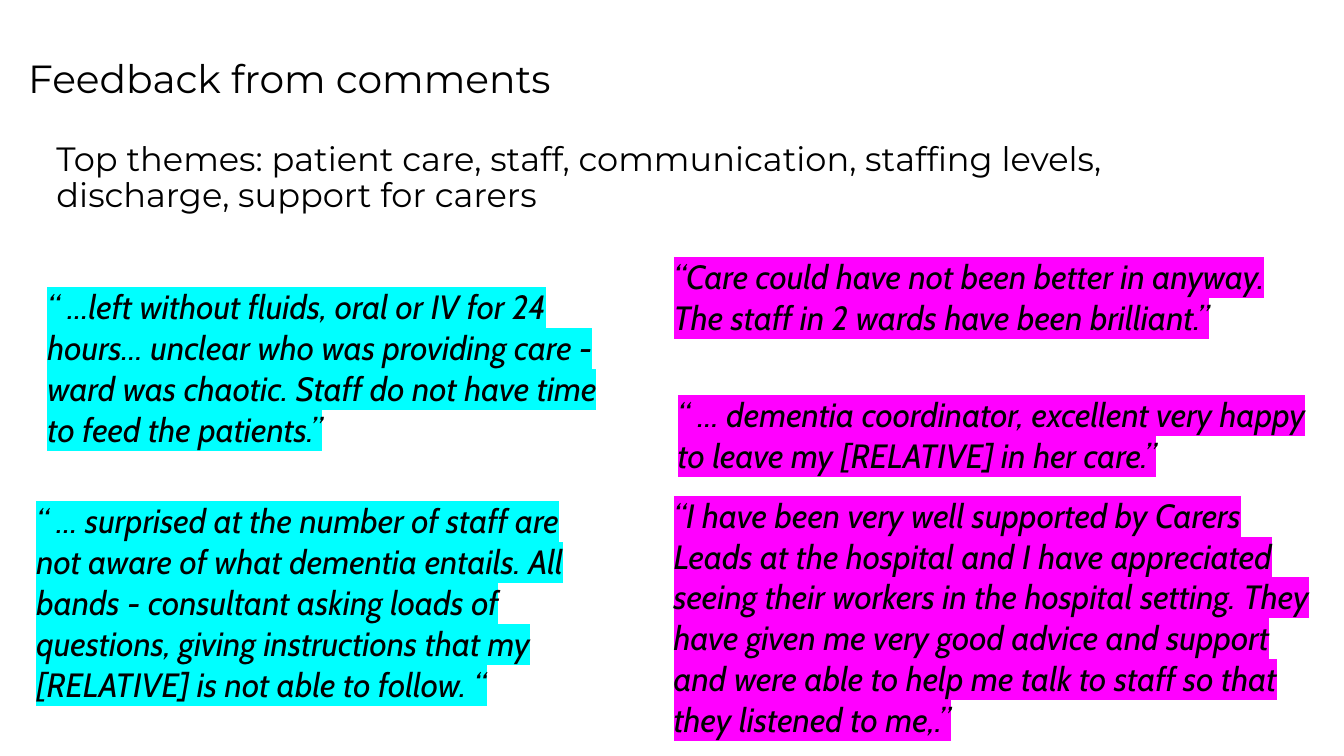
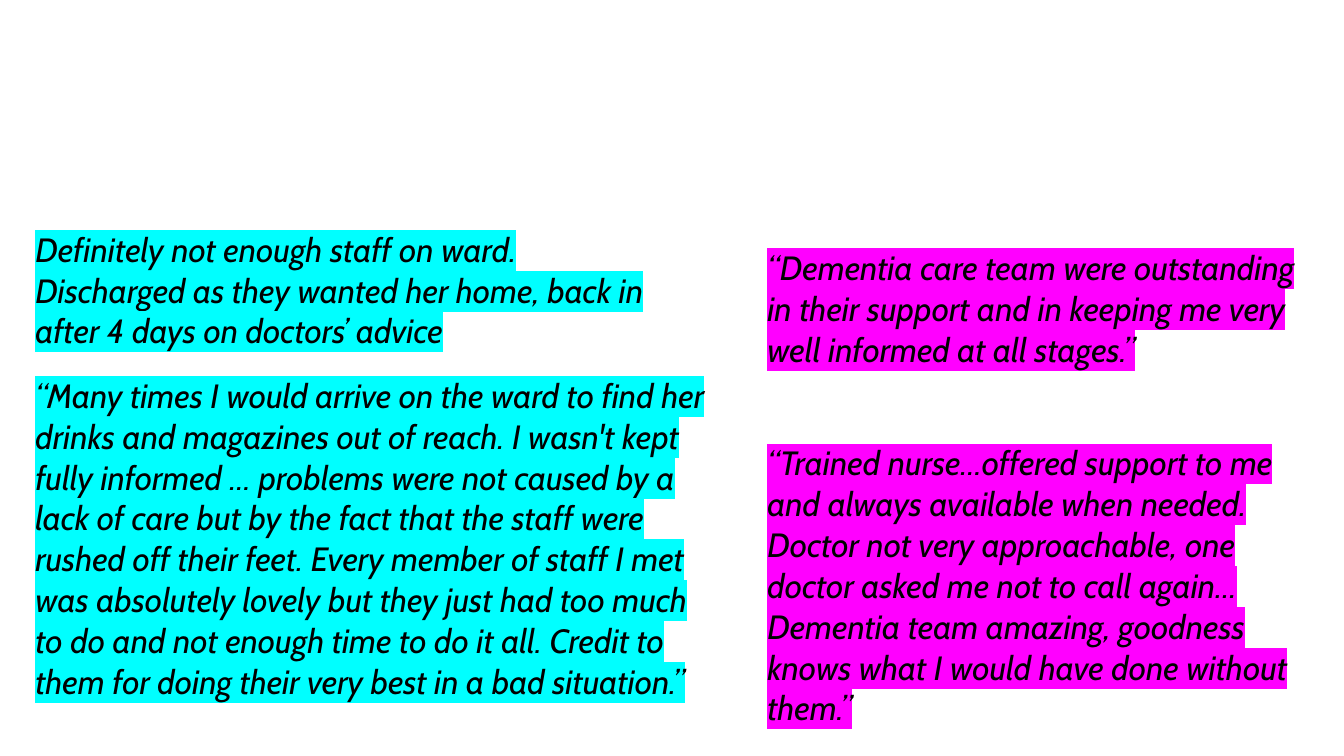
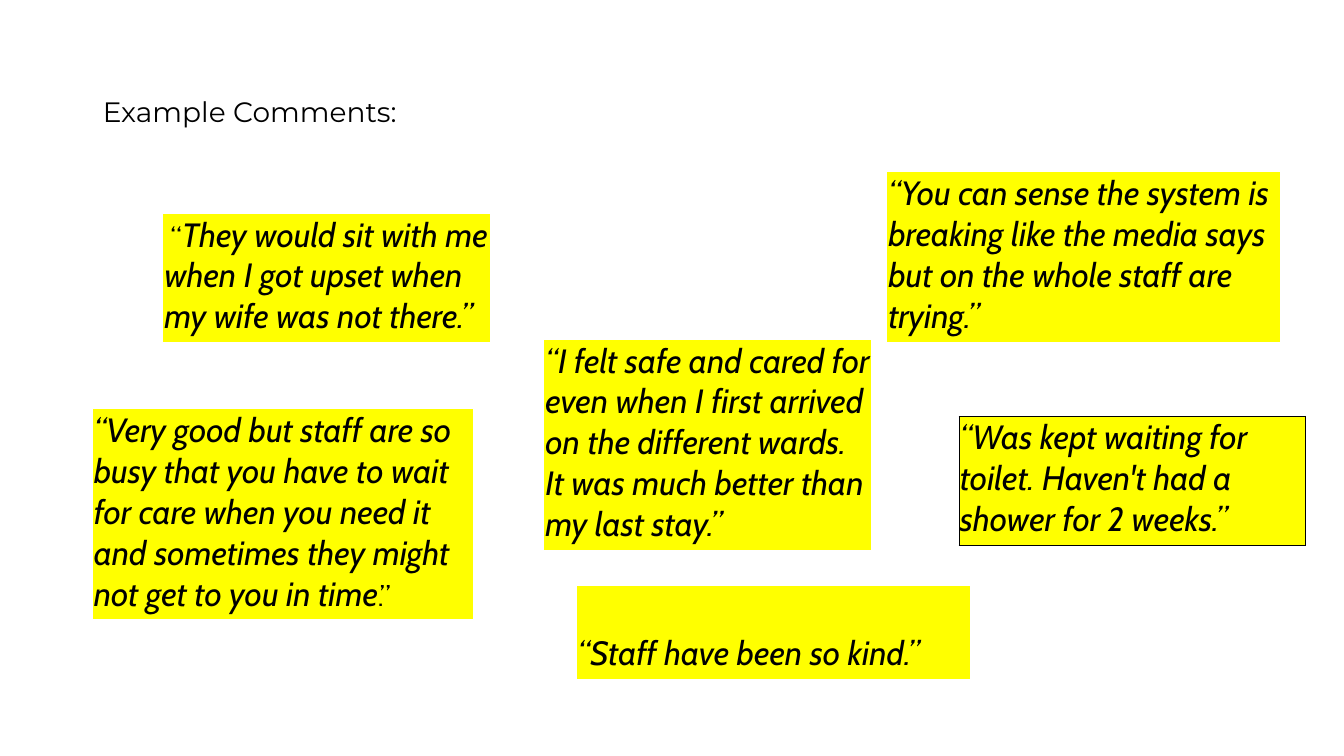
from lxml.etree import SubElement
from pptx import Presentation
from pptx.dml.color import RGBColor
from pptx.enum.text import MSO_ANCHOR, MSO_AUTO_SIZE, PP_ALIGN
from pptx.oxml import parse_xml
from pptx.oxml.ns import nsdecls, qn
from pptx.util import Inches, Pt

COLORS = {"text": "000000", "critical": "00FFFF", "praise": "FF00FF", "example": "FFFF00"}
HEADING_FONT, QUOTE_FONT = "Montserrat", "Cabin"
PLAIN_TABLE_STYLE = "{2D5ABB26-0587-4C30-8999-92F81FD0307C}"
TITLE_ONLY, TITLE_AND_BODY, BLANK = 5, 1, 6

# Content: headings are (text, left, top, width, height, size);
# quotes are (left, top, width, row height, colour name, runs),
# and each run is (text, size, italic)


def quote(text):
    return [(text, 24, True)]


PAGES = [
    {
        "layout": TITLE_AND_BODY,
        "headings": [
            ("Feedback from comments", 0.18, 0.08, 11.5, 1.45, 28),
            ("Top themes: patient care, staff, communication, staffing levels, "
             "discharge, support for carers", 0.46, 1.36, 11.5, 0.88, 24),
        ],
        "highlighted": [
            (6.71, 3.91, 6.37, 0.43, "praise", quote(
                "“ … dementia coordinator, excellent very happy to leave my "
                "[RELATIVE] in her care.”")),
            (0.35, 4.64, 5.68, 2.41, "critical", quote(
                "“ … surprised at the number of staff are not aware of what dementia "
                "entails. All bands - consultant asking loads of questions, giving "
                "instructions that my [RELATIVE] is not able to follow. “")),
            (6.67, 2.53, 5.96, 0.88, "praise", quote(
                "“Care could have not been better in anyway. The staff in 2 wards "
                "have been brilliant.”")),
            (0.46, 2.84, 5.68, 1.2, "critical", quote(
                "“ …left without fluids, oral or IV for 24 hours… unclear who was "
                "providing care - ward was chaotic. Staff do not have time to feed "
                "the patients.”")),
            (6.67, 4.46, 6.41, 2.94, "praise", quote(
                "“I have been very well supported by Carers Leads at the hospital and "
                "I have appreciated seeing their workers in the hospital setting. They "
                "have given me very good advice and support and were able to help me "
                "talk to staff so that they listened to me,.”")),
        ],
    },
    {
        "layout": BLANK,
        "highlighted": [
            (0.34, 3.72, 6.8, 1.54, "critical", quote(
                "“Many times I would arrive on the ward to find her drinks and "
                "magazines out of reach. I wasn't kept fully informed … problems were "
                "not caused by a lack of care but by the fact that the staff were "
                "rushed off their feet. Every member of staff I met was absolutely "
                "lovely but they just had too much to do and not enough time to do it "
                "all. Credit to them for doing their very best in a bad situation.”")),
            (7.6, 4.39, 5.36, 0.46, "praise", quote(
                "“Trained nurse…offered support to me and always available when "
                "needed. Doctor not very approachable, one doctor asked me not to call "
                "again…Dementia team amazing, goodness knows what I would have done "
                "without them.”")),
            (0.34, 2.27, 6.22, 0.2, "critical", quote(
                "Definitely not enough staff on ward. Discharged as they wanted her "
                "home, back in after 4 days on doctors’ advice")),
            (7.6, 2.45, 5.36, 0.4, "praise", quote(
                "“Dementia care team were outstanding in their support and in keeping "
                "me very well informed at all stages.”")),
        ],
    },
    {
        "layout": TITLE_ONLY,
        "headings": [("Example Comments:", 0.92, 0.4, 11.5, 1.45, 20)],
        "filled": [
            (1.62, 2.12, 3.24, 1.08, "example", [(" “", 20, False)] + quote(
                "They would sit with me when I got upset when my wife was not there.”")),
            (5.4, 3.37, 3.24, 0.62, "example", quote(
                "“I felt safe and cared for even when I first arrived on the different "
                "wards. It was much better than my last stay.”")),
            (8.8, 1.71, 3.9, 0.48, "example", quote(
                "“You can sense the system is breaking like the media says but on the "
                "whole staff are trying.”")),
            (0.92, 4.06, 3.77, 0.63, "example", quote(
                "“Very good but staff are so busy that you have to wait for care when "
                "you need it and sometimes they might not get to you in time")
             + [(".”", 20, False)]),
            (5.72, 5.81, 3.9, 0.93, "example", quote("“Staff have been so kind.”")),
        ],
        "outlined": [
            (9.51, 4.13, 3.44, 1.1, "example", quote(
                "“Was kept waiting for toilet. Haven't had a shower for 2 weeks.”")),
        ],
    },
]


def add_run(para, text, font, size, italic=False):
    span = para.add_run()
    span.text = text
    span.font.size = Pt(size)
    span.font.italic = italic
    span.font.color.rgb = RGBColor.from_string(COLORS["text"])
    span.font.name = font
    return span


def highlight(span, color):
    solid_fill = span.font._element.find(qn("a:solidFill"))
    solid_fill.addnext(parse_xml(
        f'<a:highlight {nsdecls("a")}><a:srgbClr val="{color}"/></a:highlight>'))


def outline(cell):
    properties = cell._tc.get_or_add_tcPr()
    for position, side in enumerate(("lnL", "lnR", "lnT", "lnB")):
        properties.insert(position, parse_xml(
            f'<a:{side} {nsdecls("a")} w="{Pt(0.5)}"><a:solidFill>'
            f'<a:srgbClr val="{COLORS["text"]}"/></a:solidFill></a:{side}>'))


def set_heading(box, text, left, top, width, height, size, is_title):
    box.left, box.top = Inches(left), Inches(top)
    box.width, box.height = Inches(width), Inches(height)
    frame = box.text_frame
    frame.auto_size = MSO_AUTO_SIZE.NONE
    frame.word_wrap = True
    frame.vertical_anchor = MSO_ANCHOR.MIDDLE if is_title else MSO_ANCHOR.TOP
    para = frame.paragraphs[0]
    para.alignment = PP_ALIGN.LEFT
    para.line_spacing = 0.9
    para.space_before = Pt(0 if is_title else 10)
    if not is_title:
        properties = para._p.get_or_add_pPr()
        properties.set("marL", "0")
        properties.set("indent", "0")
        SubElement(properties, qn("a:buNone"))
    add_run(para, text, HEADING_FONT, size)


def add_quote(page, kind, left, top, width, height, color_name, runs):
    frame = page.shapes.add_table(
        1, 1, Inches(left), Inches(top), Inches(width), Inches(height))
    table = frame.table
    table.first_row = table.horz_banding = False
    for style in frame._element.iter(qn("a:tableStyleId")):
        style.text = PLAIN_TABLE_STYLE
    cell = table.cell(0, 0)
    cell.vertical_anchor = MSO_ANCHOR.BOTTOM
    cell.margin_left = cell.margin_right = cell.margin_top = Inches(0.01)
    cell.margin_bottom = Inches(0.05)
    color = COLORS[color_name]
    if kind == "highlighted":
        cell.fill.background()
    else:
        cell.fill.solid()
        cell.fill.fore_color.rgb = RGBColor.from_string(color)
    if kind == "outlined":
        outline(cell)
    para = cell.text_frame.paragraphs[0]
    for text, size, italic in runs:
        span = add_run(para, text, QUOTE_FONT, size, italic)
        if kind == "highlighted":
            highlight(span, color)


def main():
    deck = Presentation()
    deck.slide_width, deck.slide_height = Inches(13.33), Inches(7.5)
    for content in PAGES:
        page = deck.slides.add_slide(deck.slide_layouts[content["layout"]])
        # Title first, then body
        for index, heading in enumerate(content.get("headings", [])):
            set_heading(page.placeholders[index], *heading, is_title=index == 0)
        # Quotes, one single-cell table each
        for kind in ("highlighted", "filled", "outlined"):
            for item in content.get(kind, []):
                add_quote(page, kind, *item)
    deck.save("out.pptx")


if __name__ == "__main__":
    main()
